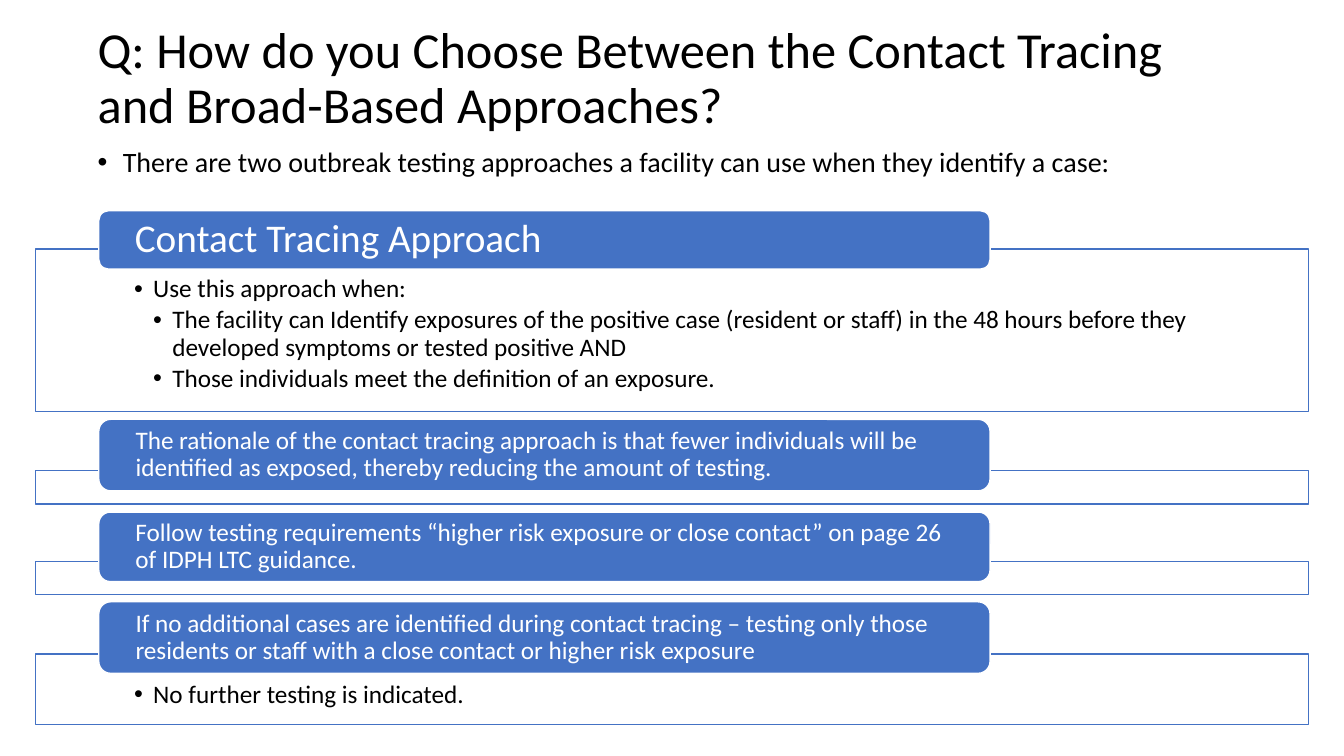
from lxml.etree import SubElement
from pptx import Presentation
from pptx.dml.color import RGBColor
from pptx.enum.shapes import MSO_SHAPE as Shape
from pptx.enum.text import MSO_ANCHOR as Anchor, PP_ALIGN as Align
from pptx.oxml.ns import qn
from pptx.util import Emu, Pt

EMU_PER_PX = 9144  # 100 px to the inch

PANEL_LEFT, PANEL_WIDTH = 35, 1263
HEADING_LEFT, HEADING_WIDTH = 98, 884

# heading: (top, height, size, text); panel: (top, height, [(level, text)])
SECTIONS = [
    ((209, 58, 28, "Contact Tracing Approach"),
     (247, 161, [
         (1, "Use this approach when:"),
         (2, "The facility can Identify exposures of the positive case (resident or staff) "
             "in the 48 hours before they developed symptoms or tested positive AND"),
         (2, "Those individuals meet the definition of an exposure."),
     ])),
    ((416, 71, 18, "The rationale of the contact tracing approach is that fewer individuals "
                   "will be identified as exposed, thereby reducing the amount of testing."),
     (467, 33, [])),
    ((508, 69, 18, "Follow testing requirements “higher risk exposure or close contact” "
                   "on page 26 of IDPH LTC guidance."),
     (557, 33, [])),
    ((597, 71, 18, "If no additional cases are identified during contact tracing – testing only "
                   "those residents or staff with a close contact or higher risk exposure"),
     (649, 70, [(1, "No further testing is indicated.")])),
]


def px(length):
    return Emu(length * EMU_PER_PX)


def color(hex_string):
    return RGBColor.from_string(hex_string)


class SlideBuilder:
    FONT = "Calibri"
    BLUE, WHITE, BLACK = "4472C4", "FFFFFF", "000000"

    def __init__(self, slide):
        self.slide = slide

    def set_frame(self, frame, anchor, insets):
        """Wrap the text and set its insets: left, top, right, bottom in px."""
        frame.word_wrap = True
        frame.vertical_anchor = anchor
        (frame.margin_left, frame.margin_top,
         frame.margin_right, frame.margin_bottom) = map(px, insets)

    def add_text(self, paragraph, text, size, hex_string):
        paragraph.alignment = Align.LEFT
        paragraph.line_spacing = 0.9
        run = paragraph.add_run()
        run.text = text
        run.font.name = self.FONT
        run.font.size = Pt(size)
        run.font.color.rgb = color(hex_string)

    def add_bullet(self, paragraph, margin, hanging):
        properties = paragraph._p.get_or_add_pPr()
        properties.set("marL", str(px(margin)))
        properties.set("indent", str(-px(hanging)))
        SubElement(properties, qn("a:buFont")).set("typeface", "Arial")
        SubElement(properties, qn("a:buChar")).set("char", "•")

    def text_box(self, box, text, size, anchor=Anchor.TOP, bullet=False):
        frame = self.slide.shapes.add_textbox(*map(px, box)).text_frame
        self.set_frame(frame, anchor, (10, 5, 10, 5))
        paragraph = frame.paragraphs[0]
        if bullet:
            self.add_bullet(paragraph, 25, 25)
        self.add_text(paragraph, text, size, self.BLACK)

    def block(self, kind, box, fill, line):
        shape = self.slide.shapes.add_shape(kind, *map(px, box))
        shape.shadow.inherit = False
        shape.fill.solid()
        shape.fill.fore_color.rgb = color(fill)
        shape.line.color.rgb = color(line)
        shape.line.width = Pt(1)
        return shape

    def panel(self, top, height, items):
        """Outlined, slightly transparent box with an optional bullet list."""
        box = (PANEL_LEFT, top, PANEL_WIDTH, height)
        shape = self.block(Shape.RECTANGLE, box, self.WHITE, self.BLUE)
        fill_color = shape._element.spPr.find(qn("a:solidFill"))[0]
        SubElement(fill_color, qn("a:alpha")).set("val", "90000")
        frame = shape.text_frame
        if items:
            self.set_frame(frame, Anchor.TOP, (98, 27, 98, 14))
        for index, (level, text) in enumerate(items):
            paragraph = frame.add_paragraph() if index else frame.paragraphs[0]
            paragraph.level = level
            self.add_bullet(paragraph, 19 * level, 19)
            paragraph.space_after = Pt(2.7)
            self.add_text(paragraph, text, 18, self.BLACK)

    def heading(self, top, height, size, text):
        box = (HEADING_LEFT, top, HEADING_WIDTH, height)
        shape = self.block(Shape.ROUNDED_RECTANGLE, box, self.BLUE, self.WHITE)
        self.set_frame(shape.text_frame, Anchor.MIDDLE, (33, 0, 33, 0))
        self.add_text(shape.text_frame.paragraphs[0], text, size, self.WHITE)


def main():
    presentation = Presentation()
    presentation.slide_width, presentation.slide_height = px(1333), px(750)
    builder = SlideBuilder(presentation.slides.add_slide(presentation.slide_layouts[6]))

    builder.text_box(
        (87, 19, 1150, 120),
        "Q: How do you Choose Between the Contact Tracing and Broad-Based Approaches?",
        36, anchor=Anchor.MIDDLE)
    builder.text_box(
        (87, 142, 1140, 60),
        "There are two outbreak testing approaches a facility can use when they identify a case:",
        20, bullet=True)
    for heading, panel in SECTIONS:
        builder.panel(*panel)
        builder.heading(*heading)

    presentation.save("out.pptx")


if __name__ == "__main__":
    main()
